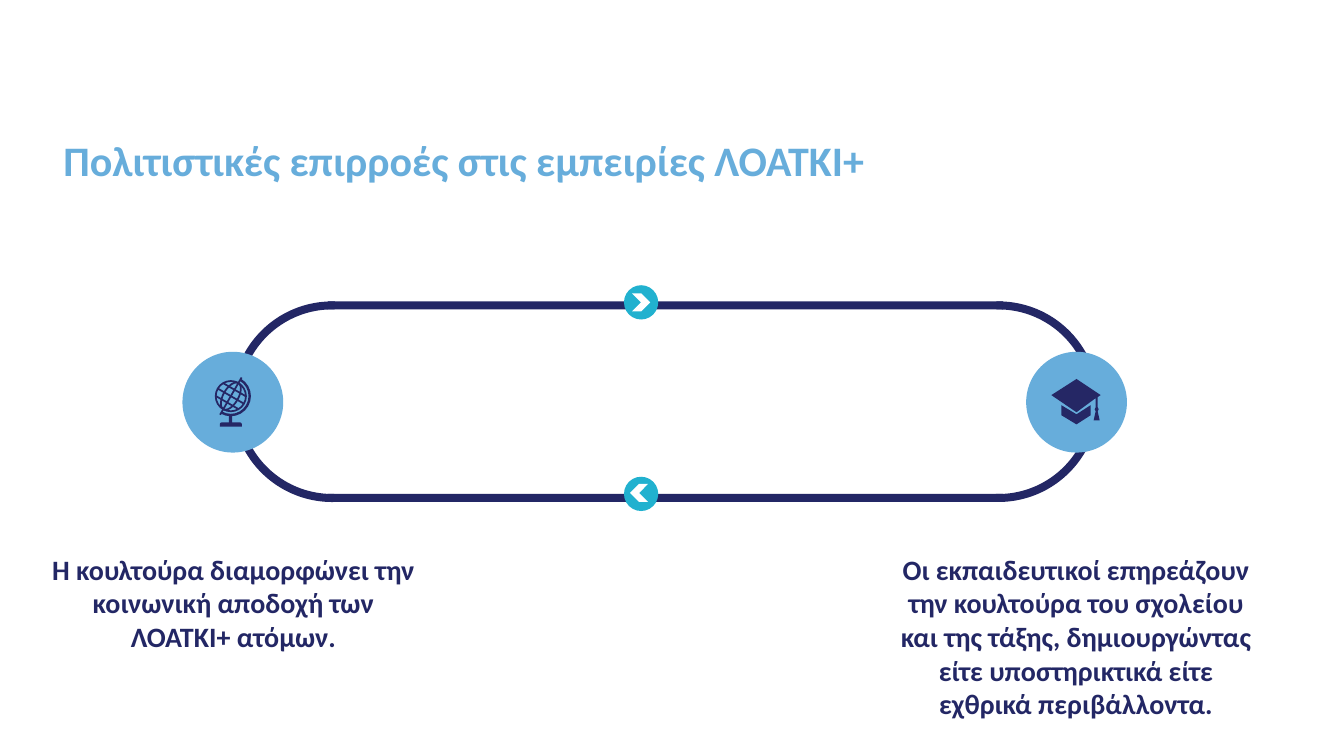
from math import cos, radians, sin, sqrt

from lxml.etree import SubElement as Sub
from pptx import Presentation
from pptx.dml.color import RGBColor as Rgb
from pptx.enum.shapes import MSO_CONNECTOR as Conn, MSO_SHAPE as Geo
from pptx.enum.text import MSO_ANCHOR as Anchor, MSO_AUTO_SIZE as Auto, PP_ALIGN as Align
from pptx.oxml.ns import qn
from pptx.util import Inches, Pt

COLS, ROWS = 40, 22.5
HUES = {"navy": "232765", "icon": "252765", "sky": "67ADDB",
        "teal": "21B1CF", "white": "FFFFFF"}


class Board:
    def __init__(self, deck):
        self.page = deck.slides.add_slide(deck.slide_layouts[6]).shapes
        self.col = deck.slide_width / COLS
        self.row = deck.slide_height / ROWS
        self.font = {"name": "Calibri", "bold": True}

    def spot(self, x, y):
        return round(x * self.col), round(y * self.row)

    def hue(self, name):
        return Rgb.from_string(HUES[name])

    def paint(self, item, hue):
        item.shadow.inherit = False
        item.fill.solid()
        item.fill.fore_color.rgb = self.hue(hue)
        item.line.fill.background()

    def shape(self, geo, x, y, wide, high, hue, turn=0, adj=()):
        item = self.page.add_shape(geo, *self.spot(x, y), *self.spot(wide, high))
        self.paint(item, hue)
        item.rotation = turn
        for i, value in enumerate(adj):
            item.adjustments[i] = value
        return item

    def disc(self, x, y, size, hue):
        return self.shape(Geo.OVAL, x, y, size, size, hue)

    def ring(self, mid, wide, high, hue, turn=0):
        x, y = mid
        item = self.shape(Geo.OVAL, x - wide / 2, y - high / 2, wide, high, hue, turn)
        item.fill.background()
        item.line.color.rgb = self.hue(hue)
        item.line.width = Pt(1.25)

    def line(self, start, end, hue):
        item = self.page.add_connector(Conn.STRAIGHT, *self.spot(*start), *self.spot(*end))
        item.line.color.rgb = self.hue(hue)
        item.line.width = Pt(1.25)
        Sub(item._element.spPr, qn("a:effectLst"))

    def outline(self, mid, loops, hue):
        loops = [[self.spot(mid[0] + x, mid[1] + y) for x, y in loop] for loop in loops]
        pen = self.page.build_freeform(*loops[0][0])
        pen.add_line_segments(loops[0][1:])
        for loop in loops[1:]:
            pen.move_to(*loop[0])
            pen.add_line_segments(loop[1:])
        self.paint(pen.convert_to_shape(), hue)

    def text(self, words, x, y, wide, high, size, hue, frame, para):
        box = self.page.add_textbox(*self.spot(x, y), *self.spot(wide, high)).text_frame
        box.text = words
        first = box.paragraphs[0]
        font = {**self.font, "size": Pt(size)}
        for part, style in ((box, {"word_wrap": True, **frame}), (first, para),
                            (first.runs[0].font, font)):
            for key, value in style.items():
                setattr(part, key, value)
        first.runs[0].font.color.rgb = self.hue(hue)


def globe(board, mid):
    x, y = mid
    size, tilt = 0.45, radians(30)

    def point(along, up):
        return (x + along * cos(tilt) + up * sin(tilt),
                y + along * sin(tilt) - up * cos(tilt))

    # Sphere with its meridian, axis and parallels
    for wide in (2 * size, size):
        board.ring(mid, wide, 2 * size, "icon", 30)
    board.line(point(0, -0.64), point(0, 0.64), "icon")
    for up in (-0.22, 0, 0.22):
        half = sqrt(size ** 2 - up ** 2)
        board.line(point(-half, up), point(half, up), "icon")
    # Stand: arc from 300 to 120 degrees, post and foot
    board.shape(Geo.BLOCK_ARC, x - 0.6, y - 0.6, 1.2, 1.2, "icon", adj=(180, 72, 0.06))
    board.shape(Geo.RECTANGLE, x - 0.06, y + 0.56, 0.1, 0.26, "icon")
    board.shape(Geo.ROUND_2_SAME_RECTANGLE, x - 0.33, y + 0.78, 0.66, 0.13,
                "icon", adj=(0.5, 0))


def cap(board, mid):
    base = [(-0.45, 0.09), (0, 0.36), (0.42, 0.09), (0.42, 0.39), (0, 0.66), (-0.45, 0.39)]
    top = [(0, -0.69), (0.72, -0.21), (0.63, -0.15), (0.63, 0.15), (0.66, 0.21),
           (0.63, 0.27), (0.69, 0.54), (0.51, 0.54), (0.57, 0.27), (0.54, 0.21),
           (0.57, 0.15), (0.57, -0.12), (0, 0.3), (-0.75, -0.21)]
    board.outline(mid, [base, top], "icon")


def main():
    deck = Presentation()
    deck.slide_width, deck.slide_height = Inches(13.33), Inches(7.5)
    board = Board(deck)

    # Title
    board.text("Πολιτιστικές επιρροές στις εμπειρίες ΛΟΑΤΚΙ+", 1.59, 3.75, 35.67, 2.22,
               30, "sky", {"vertical_anchor": Anchor.MIDDLE}, {"line_spacing": 0.9})

    # Loop: rounded ends and straight bars
    for x, turn in ((26.73, 0), (6.9, 180)):
        board.shape(Geo.BLOCK_ARC, x, 8.97, 5.97, 5.97, "navy", turn, (161.27, 54.9, 0.04))
    for y in (8.97, 14.7):
        board.shape(Geo.RECTANGLE, 9.75, y, 20.1, 0.24, "navy")

    # Direction marks
    for y, left, top, turn in ((8.49, 18.81, 8.73, 0), (14.19, 18.75, 14.4, 180)):
        board.disc(18.57, y, 1.02, "teal")
        board.shape(Geo.CHEVRON, left, top, 0.54, 0.54, "white", turn, (0.5,))

    # Discs with icons
    for x in (5.43, 30.54):
        board.disc(x, 10.47, 3, "sky")
    globe(board, (6.87, 11.79))
    cap(board, (32.04, 11.97))

    # Captions
    notes = (
        (1.17, 2.31, "Η κουλτούρα διαμορφώνει την κοινωνική αποδοχή των ΛΟΑΤΚΙ+ ατόμων."),
        (26.25, 4.35, "Οι εκπαιδευτικοί επηρεάζουν την κουλτούρα του σχολείου και της τάξης, "
                      "δημιουργώντας είτε υποστηρικτικά είτε εχθρικά περιβάλλοντα."))
    for x, high, words in notes:
        board.text(words, x, 16.29, 11.55, high, 20, "navy",
                   {"auto_size": Auto.SHAPE_TO_FIT_TEXT}, {"alignment": Align.CENTER})

    deck.save("out.pptx")


if __name__ == "__main__":
    main()
